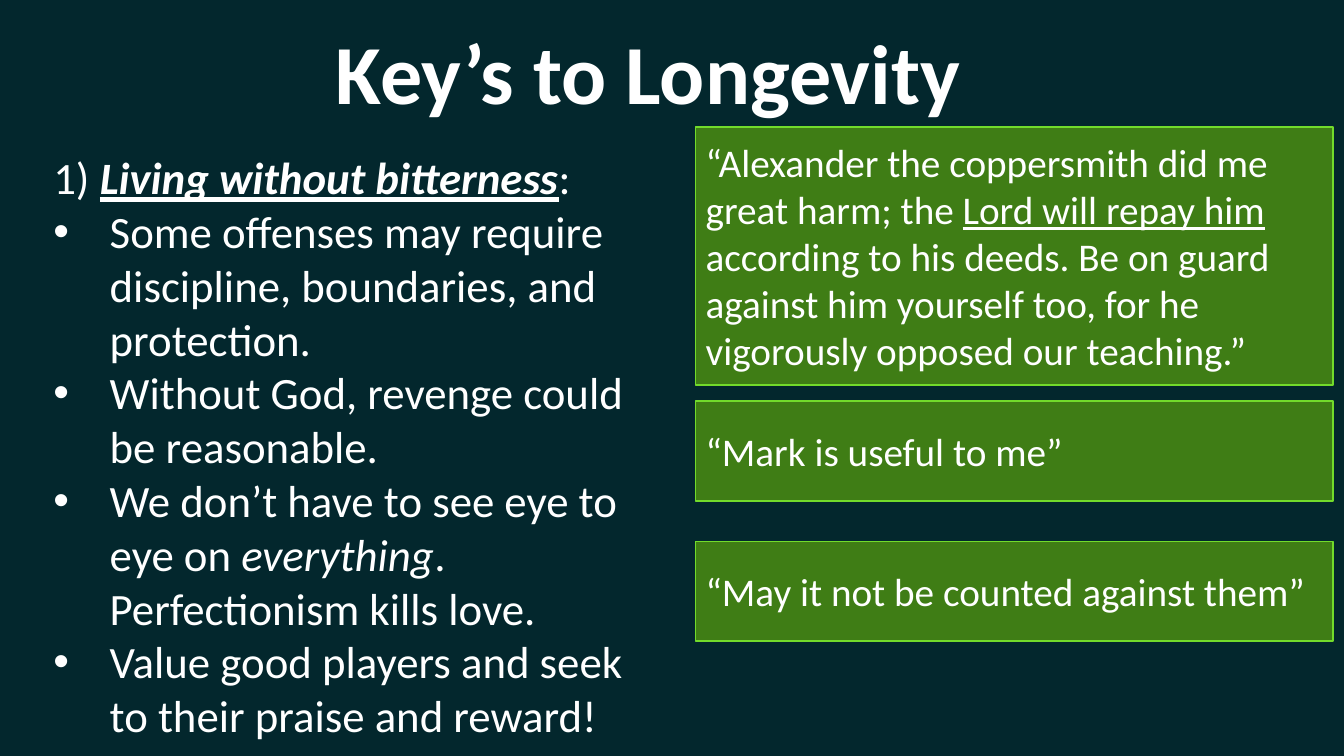
from dataclasses import dataclass

from lxml import etree
from pptx import Presentation
from pptx import util as u
from pptx.dml.color import RGBColor
from pptx.enum import shapes, text
from pptx.oxml import ns

PX = 9144  # EMU per px, 100 px to the inch


@dataclass(frozen=True)
class Theme:
    font: str = "Calibri"
    background: RGBColor = RGBColor(0x03, 0x27, 0x2D)
    ink: RGBColor = RGBColor(0xFF, 0xFF, 0xFF)
    quote_fill: RGBColor = RGBColor(0x3F, 0x7D, 0x15)
    quote_line: RGBColor = RGBColor(0x72, 0xDB, 0x2B)
    title_size: int = 60
    list_size: int = 32
    quote_size: int = 28
    bullet_indent: int = 56


@dataclass(frozen=True)
class Span:
    text: str
    bold: bool = False
    italic: bool = False
    underline: bool = False


@dataclass(frozen=True)
class Line:
    spans: tuple[Span, ...]
    bullet: bool = False


@dataclass(frozen=True)
class Quote:
    top: int
    height: int
    spans: tuple[Span, ...]


THEME = Theme()
QUOTE_LEFT, QUOTE_WIDTH = 690, 632

TITLE = Line((Span("Key’s to Longevity", bold=True),))

KEYS = (
    Line((Span("1) "),
          Span("Living without bitterness", bold=True, italic=True, underline=True),
          Span(":"))),
    Line((Span("Some offenses may require discipline, boundaries, and protection."),), bullet=True),
    Line((Span("Without God, revenge could be reasonable."),), bullet=True),
    Line((Span("We don’t have to see eye to eye on "),
          Span("everything", italic=True),
          Span(". Perfectionism kills love.")), bullet=True),
    Line((Span("Value good players and seek to their praise and reward!"),), bullet=True),
)

QUOTES = (
    Quote(126, 256, (
        Span("“Alexander the coppersmith did me great harm; the "),
        Span("Lord will repay him ", underline=True),
        Span("according to his deeds. Be on guard against him yourself too, "
             "for he vigorously opposed our teaching.”"))),
    Quote(398, 99, (Span("“Mark is useful to me”"),)),
    Quote(537, 99, (Span("“May it not be counted against them”"),)),
)


def add_bullet(paragraph) -> None:
    """Give the paragraph a round bullet with a hanging indent."""
    properties = paragraph._p.get_or_add_pPr()
    indent = THEME.bullet_indent * PX
    properties.set("marL", str(indent))
    properties.set("indent", str(-indent))
    etree.SubElement(properties, ns.qn("a:buFont")).set("typeface", "Arial")
    etree.SubElement(properties, ns.qn("a:buChar")).set("char", "•")


def write_lines(text_frame, lines: tuple[Line, ...], size: int) -> None:
    text_frame.word_wrap = True
    for index, line in enumerate(lines):
        paragraph = text_frame.add_paragraph() if index else text_frame.paragraphs[0]
        paragraph.alignment = text.PP_ALIGN.LEFT
        if line.bullet:
            add_bullet(paragraph)
        for span in line.spans:
            run = paragraph.add_run()
            run.text = span.text
            font = run.font
            font.name, font.size = THEME.font, u.Pt(size)
            font.color.rgb = THEME.ink
            font.bold, font.italic, font.underline = span.bold, span.italic, span.underline


def add_panel(slide, left: int, top: int, width: int, height: int, fill: RGBColor):
    shape = slide.shapes.add_shape(
        shapes.MSO_SHAPE.RECTANGLE, left * PX, top * PX, width * PX, height * PX)
    shape.shadow.inherit = False
    shape.fill.solid()
    shape.fill.fore_color.rgb = fill
    return shape


def add_title(slide) -> None:
    title = slide.shapes.add_textbox(323 * PX, 15 * PX, 711 * PX, 111 * PX)
    title.text_frame.auto_size = text.MSO_AUTO_SIZE.SHAPE_TO_FIT_TEXT
    write_lines(title.text_frame, (TITLE,), THEME.title_size)


def add_keys(slide) -> None:
    panel = add_panel(slide, 43, 144, 619, 606, THEME.background)
    panel.line.fill.background()
    panel.text_frame.vertical_anchor = text.MSO_ANCHOR.TOP
    write_lines(panel.text_frame, KEYS, THEME.list_size)


def add_quote(slide, quote: Quote) -> None:
    panel = add_panel(slide, QUOTE_LEFT, quote.top, QUOTE_WIDTH, quote.height, THEME.quote_fill)
    panel.line.color.rgb = THEME.quote_line
    panel.line.width = u.Pt(1)
    panel.text_frame.vertical_anchor = text.MSO_ANCHOR.MIDDLE
    write_lines(panel.text_frame, (Line(quote.spans),), THEME.quote_size)


def main() -> None:
    presentation = Presentation()
    presentation.slide_width, presentation.slide_height = 1333 * PX, 750 * PX
    slide = presentation.slides.add_slide(presentation.slide_layouts[6])

    # Background
    slide.background.fill.solid()
    slide.background.fill.fore_color.rgb = THEME.background

    # Title and list of keys
    add_title(slide)
    add_keys(slide)

    # Quotations on the right
    for quote in QUOTES:
        add_quote(slide, quote)

    presentation.save("out.pptx")


if __name__ == "__main__":
    main()
